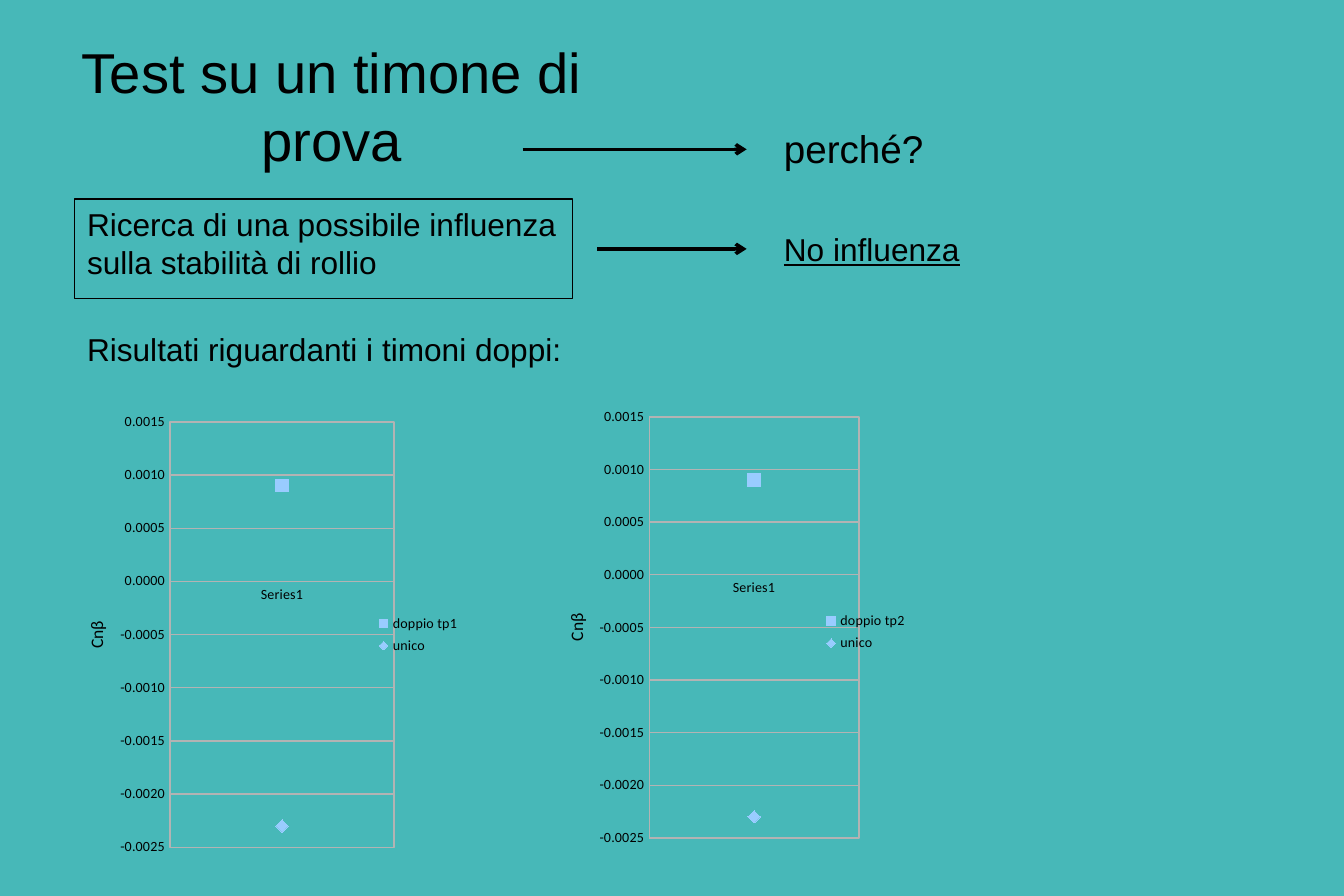
from lxml.etree import SubElement
from pptx import Presentation
from pptx.chart.data import CategoryChartData
from pptx.dml.color import RGBColor
from pptx.enum.chart import XL_CHART_TYPE as ChartType, XL_LEGEND_POSITION as LegendPosition
from pptx.enum.chart import XL_MARKER_STYLE as Marker, XL_TICK_MARK as TickMark
from pptx.enum.shapes import MSO_CONNECTOR as Connector, MSO_SHAPE as Shape
from pptx.enum.text import MSO_ANCHOR as Anchor, MSO_AUTO_SIZE as AutoSize, PP_ALIGN as Align
from pptx.oxml import parse_xml
from pptx.oxml.ns import nsdecls, qn
from pptx.util import Cm, Pt

TEAL = RGBColor(0x47, 0xB8, 0xB8)
BLACK = RGBColor(0x00, 0x00, 0x00)
GREY = RGBColor(0xB3, 0xB3, 0xB3)
PALE_BLUE = RGBColor(0x99, 0xCC, 0xFF)

COLUMNS, ROWS = 27, 18
CELL = Cm(1)


def grid(*cells):
    return [round(cell * CELL) for cell in cells]


def apply(target, formats):
    for name, value in formats.items():
        setattr(target, name, value)


def set_font(font, size, name, **formats):
    apply(font, {"size": Pt(size), "name": name, **formats})
    font.color.rgb = BLACK


def set_line(line, color, width):
    line.color.rgb = color
    line.width = Pt(width)


def add_text(slide, box, text, size, underline=None):
    frame = slide.shapes.add_textbox(*grid(*box)).text_frame
    apply(frame, {"word_wrap": True, "auto_size": AutoSize.SHAPE_TO_FIT_TEXT})
    run = frame.paragraphs[0].add_run()
    run.text = text
    set_font(run.font, size, "Arial", underline=underline)
    return frame


def add_title(slide, box, text):
    frame = add_text(slide, box, text, 32)
    margins = {f"margin_{side}": 0 for side in ("left", "top", "right", "bottom")}
    apply(frame, {"auto_size": AutoSize.NONE, "vertical_anchor": Anchor.MIDDLE, **margins})
    frame.paragraphs[0].alignment = Align.CENTER


def add_arrow(slide, left, right, row):
    arrow = slide.shapes.add_connector(Connector.STRAIGHT, *grid(left, row, right, row))
    set_line(arrow.line, BLACK, 0)
    SubElement(arrow.line._get_or_add_ln(), qn("a:tailEnd"), type="arrow")
    SubElement(arrow._element.spPr, qn("a:effectLst"))


def add_frame(slide, box):
    frame = slide.shapes.add_shape(Shape.RECTANGLE, *grid(*box))
    frame.shadow.inherit = False
    frame.fill.background()
    set_line(frame.line, BLACK, 0)


def set_plot_area(chart, plot_box):
    area = chart._chartSpace.chart.plotArea
    for layout in area.findall(qn("c:layout")):
        area.remove(layout)
    shares = "".join(f'<c:{key} val="{share}"/>' for key, share in zip("xywh", plot_box))
    area.insert(0, parse_xml(
        f'<c:layout {nsdecls("c")}><c:manualLayout><c:layoutTarget val="inner"/>'
        f'<c:xMode val="edge"/><c:yMode val="edge"/>{shares}</c:manualLayout></c:layout>'))
    area.append(parse_xml(
        f'<c:spPr {nsdecls("c", "a")}><a:noFill/><a:ln w="{Pt(0.75)}"><a:solidFill>'
        f'<a:srgbClr val="{GREY}"/></a:solidFill></a:ln></c:spPr>'))


def style_axes(chart):
    for axis in (chart.category_axis, chart.value_axis):
        apply(axis, {"major_tick_mark": TickMark.NONE, "minor_tick_mark": TickMark.NONE})
        set_font(axis.tick_labels.font, 8, "Calibri")
        set_line(axis.format.line, GREY, 0.75)
    values = chart.value_axis
    apply(values, {"minimum_scale": -0.0025, "maximum_scale": 0.0015, "major_unit": 0.0005})
    apply(values.tick_labels, {"number_format": "0.0000", "number_format_is_linked": False})
    set_line(values.major_gridlines.format.line, GREY, 0.75)
    frame = values.axis_title.text_frame
    frame.text = "Cnβ"
    set_font(frame.paragraphs[0].runs[0].font, 10, "Calibri", bold=False)
    apply_rotation = frame._txBody.bodyPr.set
    apply_rotation("rot", "-5400000")
    apply_rotation("vert", "horz")


def add_rudder_chart(slide, box, plot_box, double_name):
    data = CategoryChartData(number_format="0.0000")
    data.categories = ["Series1"]
    data.add_series(double_name, [0.0009])
    data.add_series("unico", [-0.0023])
    chart = slide.shapes.add_chart(ChartType.LINE_MARKERS, *grid(*box), data).chart
    apply(chart, {"has_title": False, "has_legend": True})
    set_font(chart.font, 10, "Calibri")
    apply(chart.legend, {"position": LegendPosition.RIGHT, "include_in_layout": False})
    set_font(chart.legend.font, 8, "Calibri")
    chart.plots[0].vary_by_categories = False
    for series, style in zip(chart.plots[0].series, (Marker.SQUARE, Marker.DIAMOND)):
        series.smooth = False
        series.format.line.fill.background()
        apply(series.marker, {"style": style, "size": 7})
        series.marker.format.fill.solid()
        series.marker.format.fill.fore_color.rgb = PALE_BLUE
        series.marker.format.line.fill.background()
    style_axes(chart)
    set_plot_area(chart, plot_box)


def add_question(slide):
    add_title(slide, (0.84, 0.74, 11.66, 2.74), "Test su un timone di prova")
    add_arrow(slide, 10.5, 15, 3)
    add_text(slide, (15.5, 2.39, 5.5, 1.12), "perché?", 22)


def add_finding(slide):
    left, top, width, height = box = (1.5, 4, 10, 2)
    add_text(slide, box, "Ricerca di una possibile influenza sulla stabilità di rollio", 18)
    add_frame(slide, box)
    middle = top + height / 2
    add_arrow(slide, left + width + 0.5, 15, middle)
    add_text(slide, (15.5, middle - 0.5, 5, 0.97), "No influenza", 18, underline=True)


def add_results(slide):
    add_text(slide, (1.5, 6.5, 10.5, 0.97), "Risultati riguardanti i timoni doppi:", 18)
    add_rudder_chart(slide, (1.6, 8, 7.9, 9.5), (0.23, 0.05, 0.57, 0.9), "doppio tp1")
    add_rudder_chart(slide, (11.23, 8, 7.26, 9.4), (0.25, 0.04, 0.58, 0.9), "doppio tp2")


def main():
    presentation = Presentation()
    apply(presentation, {"slide_width": COLUMNS * CELL, "slide_height": ROWS * CELL})
    slide = presentation.slides.add_slide(presentation.slide_layouts[6])
    slide.background.fill.solid()
    slide.background.fill.fore_color.rgb = TEAL
    add_question(slide)
    add_finding(slide)
    add_results(slide)
    presentation.save("out.pptx")


if __name__ == "__main__":
    main()
